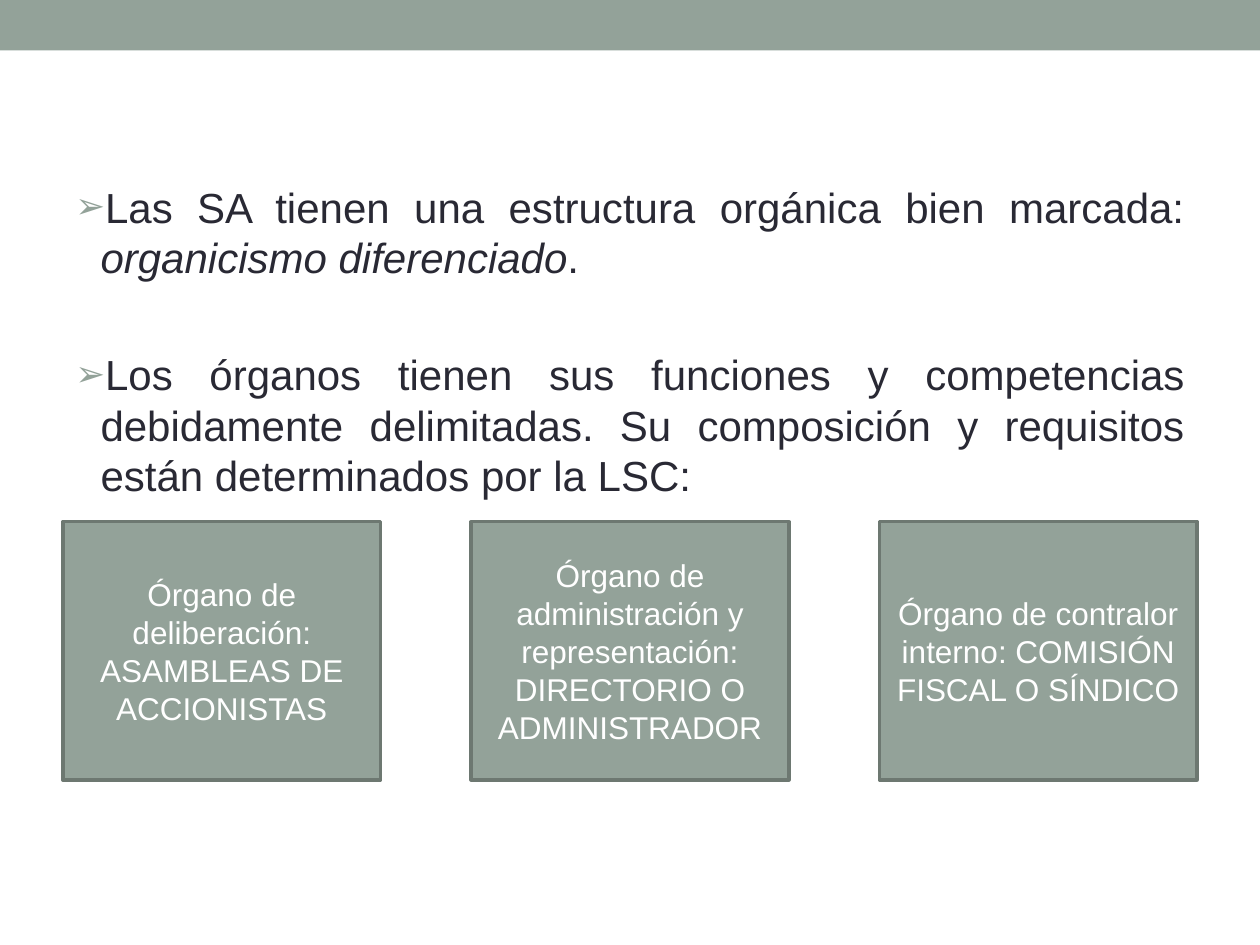
from lxml.etree import SubElement
from pptx import Presentation
from pptx.dml.color import RGBColor
from pptx.enum.shapes import MSO_SHAPE
from pptx.enum.text import MSO_ANCHOR as Anchor, PP_ALIGN as Align
from pptx.oxml.ns import qn
from pptx.util import Inches, Pt

SAGE = "93A299"
SAGE_DARK = "6D7871"
INK = "292934"
WHITE = "FFFFFF"
FONT = "Arial"

POINTS = [
    [("Las SA tienen una estructura orgánica bien marcada: ", False),
     ("organicismo diferenciado", True), (".", False)],
    [("Los órganos tienen sus funciones y competencias debidamente delimitadas. "
      "Su composición y requisitos están determinados por la LSC:", False)],
]
ORGANS = [
    "Órgano de deliberación: ASAMBLEAS DE ACCIONISTAS",
    "Órgano de administración y representación: DIRECTORIO O ADMINISTRADOR",
    "Órgano de contralor interno: COMISIÓN FISCAL O SÍNDICO",
]


def color(value):
    return RGBColor.from_string(value)


def apply_format(target, values):
    for name, value in values.items():
        setattr(target, name, value)


def add_run(paragraph, text, size, ink, italic=False):
    run = paragraph.add_run()
    run.text = text
    apply_format(run.font, {"name": FONT, "size": Pt(size), "italic": italic})
    run.font.color.rgb = color(ink)


def add_rectangle(slide, box, line=None):
    shape = slide.shapes.add_shape(MSO_SHAPE.RECTANGLE, *box)
    shape.shadow.inherit = False
    shape.fill.solid()
    shape.fill.fore_color.rgb = color(SAGE)
    if line:
        shape.line.color.rgb = color(line)
        shape.line.width = Pt(2.08)
    else:
        shape.line.fill.background()
    return shape


def add_bullet(paragraph, symbol):
    properties = paragraph._p.get_or_add_pPr()
    indent = Inches(0.2)
    properties.set("marL", str(indent))
    properties.set("indent", str(-indent))
    bullet_color = SubElement(properties, qn("a:buClr"))
    SubElement(bullet_color, qn("a:srgbClr"), val=SAGE)
    SubElement(properties, qn("a:buSzPct"), val="85000")
    SubElement(properties, qn("a:buFont"), typeface=FONT)
    SubElement(properties, qn("a:buChar"), char=symbol)


def add_points(slide, box, points):
    frame = slide.shapes.add_textbox(*box).text_frame
    frame.word_wrap = True
    for index, runs in enumerate(points):
        paragraph = frame.paragraphs[0] if index == 0 else frame.add_paragraph()
        apply_format(paragraph, {"alignment": Align.JUSTIFY,
                                 "space_before": Pt(38 if index else 4.8)})
        add_bullet(paragraph, "➢")
        for text, italic in runs:
            add_run(paragraph, text, 24, INK, italic)


def add_organs(slide, box, organs):
    left, top, width, height = box
    box_width = Inches(2.52)
    step = (width - box_width) // (len(organs) - 1)
    for index, text in enumerate(organs):
        shape = add_rectangle(slide, (left + index * step, top, box_width, height), SAGE_DARK)
        frame = shape.text_frame
        apply_format(frame, {"word_wrap": True, "vertical_anchor": Anchor.MIDDLE})
        paragraph = frame.paragraphs[0]
        paragraph.alignment = Align.CENTER
        add_run(paragraph, text, 18, WHITE)


def main():
    presentation = Presentation()
    apply_format(presentation, {"slide_width": Inches(10), "slide_height": Inches(7.5)})
    slide = presentation.slides.add_slide(presentation.slide_layouts[6])
    margin = Inches(0.5)
    content_width = presentation.slide_width - 2 * margin
    add_rectangle(slide, (0, 0, presentation.slide_width, Inches(0.4)))
    add_points(slide, (margin, Inches(1.39), content_width, Inches(5.67)), POINTS)
    add_organs(slide, (margin, Inches(4.14), content_width, Inches(2.05)), ORGANS)
    presentation.save("out.pptx")


if __name__ == "__main__":
    main()
